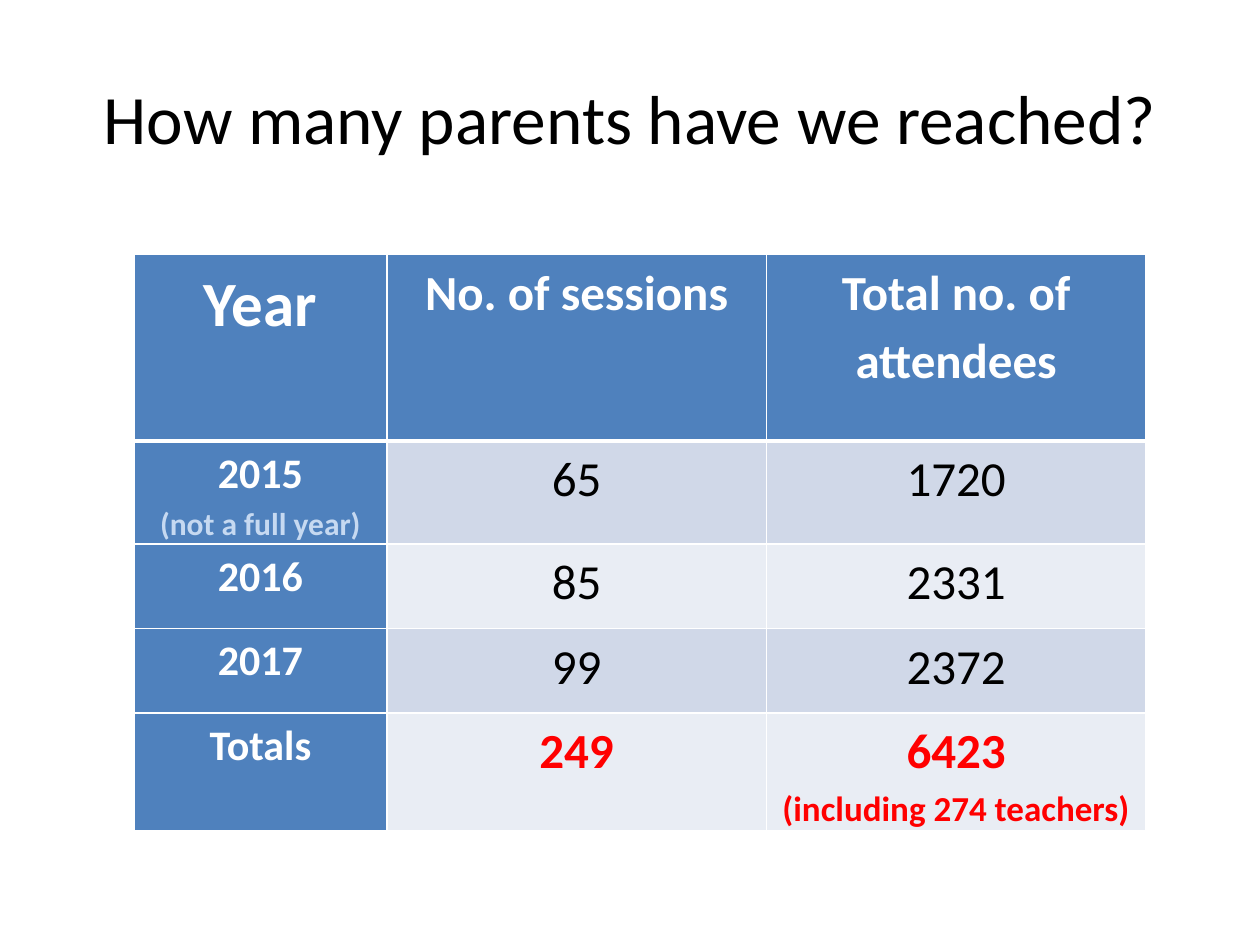
"""Build the slide on how many parents the sessions have reached."""
from lxml import etree
from pptx import Presentation
from pptx.dml.color import RGBColor
from pptx.enum.text import MSO_ANCHOR, PP_ALIGN
from pptx.oxml.ns import qn
from pptx.util import Cm, Pt

CENTER = PP_ALIGN.CENTER
MIDDLE = MSO_ANCHOR.MIDDLE
TOP = MSO_ANCHOR.TOP
TITLE_ONLY = 5

COLORS = {
    "black": "000000",
    "white": "FFFFFF",
    "blue": "4F81BD",
    "pale_blue": "C6D9F1",
    "band_dark": "D0D8E8",
    "band_light": "E9EDF4",
    "red": "FF0000",
}
CELL_FORMAT = {
    "margin_left": Cm(0.19),
    "margin_right": Cm(0.19),
    "margin_top": 0,
    "margin_bottom": 0,
    "vertical_anchor": TOP,
}
PARAGRAPH_FORMAT = {"alignment": CENTER, "line_spacing": 1.15, "space_before": Pt(0)}

COLUMN_WIDTHS = [5.1, 7.65, 7.65]
ROW_HEIGHTS = [3.76, 1.93, 1.7, 1.7, 1.7]
HEADERS = ["Year", "No. of sessions", "Total no. of attendees"]
YEARS = [("2015", "65", "1720"), ("2016", "85", "2331"), ("2017", "99", "2372")]
TOTALS = ("Totals", "249", "6423")
NOTES = {
    (1, 0): ("(not a full year)", 18, "pale_blue", True),
    (4, 2): ("(including 274 teachers)", 20, "red", True),
}


def apply_format(target, values):
    """Set every attribute named in values on the target."""
    for name, value in values.items():
        setattr(target, name, value)


class SlideBuilder:
    """Hold the style and the current slide."""

    def __init__(self, slide, font_name="Calibri"):
        self.slide = slide
        self.font_name = font_name

    def style_font(self, font, size, color, bold):
        """Apply the slide font with the given size, colour and weight."""
        apply_format(font, {"name": self.font_name, "size": Pt(size), "bold": bold})
        font.color.rgb = RGBColor.from_string(COLORS[color])

    def add_title(self, text, box):
        """Fill and place the title placeholder."""
        title = self.slide.shapes.title
        apply_format(title, dict(zip(("left", "top", "width", "height"), map(Cm, box))))
        title.text_frame.vertical_anchor = MIDDLE
        paragraph = title.text_frame.paragraphs[0]
        paragraph.text = text
        paragraph.alignment = CENTER
        self.style_font(paragraph.runs[0].font, 39.6, "black", False)

    def add_table(self, left, top, widths, heights):
        """Add a table with the given column widths and row heights."""
        table = self.slide.shapes.add_table(
            len(heights), len(widths), Cm(left), Cm(top), Cm(sum(widths)), Cm(sum(heights))
        ).table
        for column, width in zip(table.columns, widths):
            column.width = Cm(width)
        for row, height in zip(table.rows, heights):
            row.height = Cm(height)
        return table

    def add_border(self, cell, side, width):
        """Add a solid white border on one side of a cell."""
        properties = cell._tc.get_or_add_tcPr()
        line = etree.SubElement(properties, qn(f"a:ln{side}"), w=str(Pt(width)))
        fill = etree.SubElement(line, qn("a:solidFill"))
        etree.SubElement(fill, qn("a:srgbClr"), val=COLORS["white"])

    def fill_cell(self, cell, lines, fill, borders):
        """Write styled lines into a cell and set its borders and fill."""
        apply_format(cell, CELL_FORMAT)
        for side, width in borders.items():
            self.add_border(cell, side, width)
        cell.fill.solid()
        cell.fill.fore_color.rgb = RGBColor.from_string(COLORS[fill])
        frame = cell.text_frame
        for index, (text, size, color, bold) in enumerate(lines):
            paragraph = frame.add_paragraph() if index else frame.paragraphs[0]
            apply_format(paragraph, PARAGRAPH_FORMAT)
            run = paragraph.add_run()
            run.text = text
            self.style_font(run.font, size, color, bold)


def cell_style(row, column):
    """Return text size, text colour, weight and fill for a table position."""
    if row == 0:
        return 28 if column else 36, "white", True, "blue"
    if column == 0:
        return 24, "white", True, "blue"
    is_total = row == len(YEARS) + 1
    band = "band_dark" if row % 2 else "band_light"
    return 28, "red" if is_total else "black", is_total, band


def main():
    """Build and save the presentation."""
    presentation = Presentation()
    presentation.slide_width, presentation.slide_height = Cm(25.4), Cm(19.05)
    slide = presentation.slides.add_slide(presentation.slide_layouts[TITLE_ONLY])
    builder = SlideBuilder(slide)
    builder.add_title("How many parents have we reached?", (1.27, 0.76, 22.86, 3.18))

    table = builder.add_table(2.7, 5.13, COLUMN_WIDTHS, ROW_HEIGHTS)
    for row, texts in enumerate([HEADERS, *YEARS, TOTALS]):
        borders = {"L": 1, "R": 1, "T": 3 if row == 1 else 1, "B": 1 if row else 3}
        for column, text in enumerate(texts):
            size, color, bold, fill = cell_style(row, column)
            lines = [(text, size, color, bold)]
            if (row, column) in NOTES:
                lines.append(NOTES[row, column])
            builder.fill_cell(table.cell(row, column), lines, fill, borders)

    presentation.save("out.pptx")


if __name__ == "__main__":
    main()
